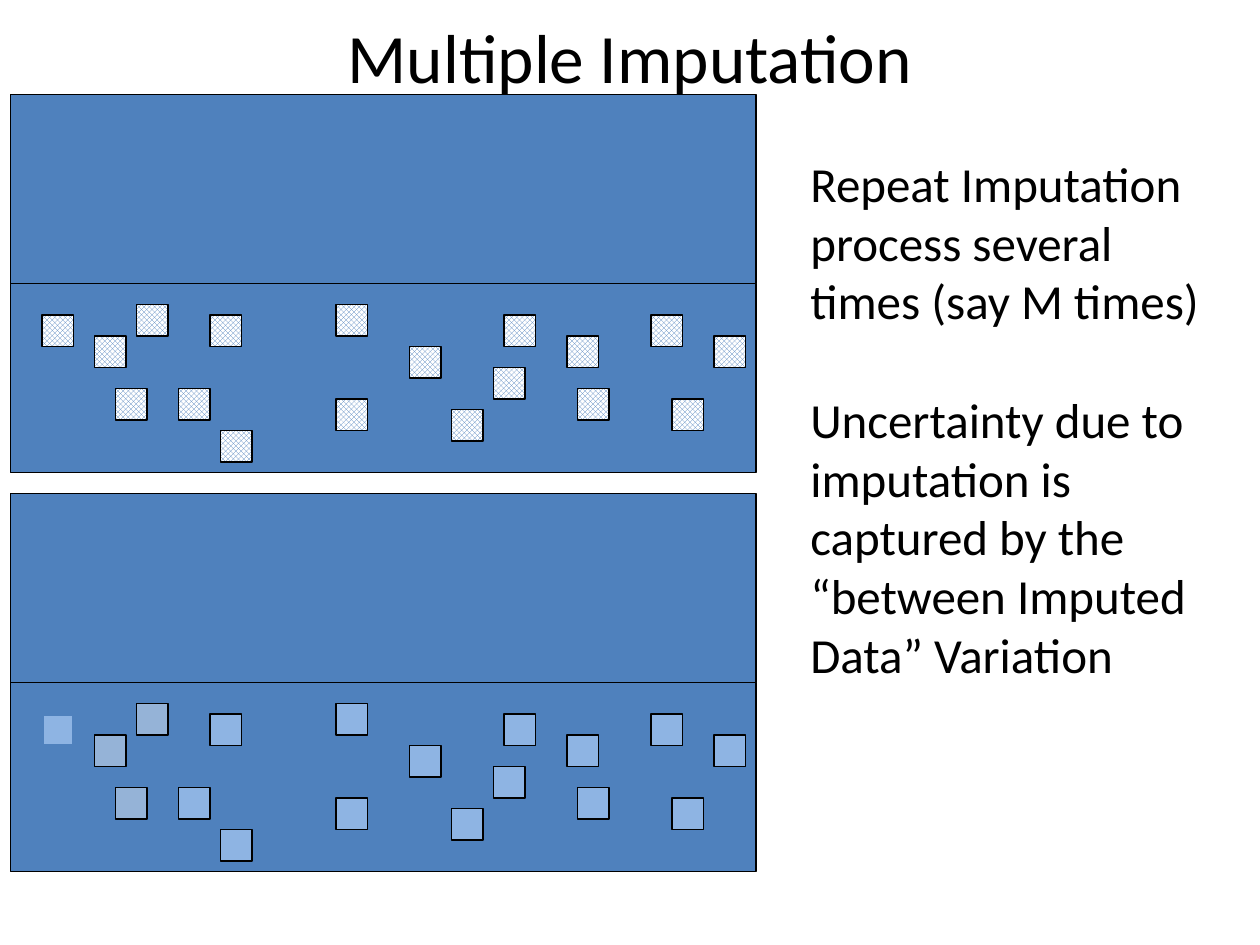
from dataclasses import dataclass
from pptx import Presentation
from pptx.dml.color import RGBColor
from pptx.enum.dml import MSO_PATTERN
from pptx.enum.shapes import MSO_SHAPE
from pptx.enum.text import MSO_ANCHOR, MSO_AUTO_SIZE, PP_ALIGN
from pptx.util import Inches, Pt


@dataclass(frozen=True)
class Theme:
    font: str = "Calibri"
    title: float = 39.6
    body: float = 28
    para_gap: float = 34
    line: float = 0.75
    heavy: float = 2
    ink: RGBColor = RGBColor(0x00, 0x00, 0x00)
    paper: RGBColor = RGBColor(0xFF, 0xFF, 0xFF)
    blue: RGBColor = RGBColor(0x4F, 0x81, 0xBD)
    light: RGBColor = RGBColor(0x8E, 0xB4, 0xE3)
    grey: RGBColor = RGBColor(0x95, 0xB3, 0xD7)


T = Theme()
UNIT = Inches(1) / 12
CELL = 3
CELLS = [
    (3, 3), (8, 5), (12, 2), (10, 10), (16, 10), (20, 14),
    (19, 3), (31, 2), (53, 5), (47, 3), (46, 8), (54, 10),
    (31, 11), (63, 11), (42, 12), (61, 3), (38, 6), (67, 5),
]
NOTES = [
    "Repeat Imputation process several times (say M times)",
    "Uncertainty due to imputation is captured by the “between Imputed Data” Variation",
]


def grid(*box):
    return [round(v * UNIT) for v in box]


def put(obj, values):
    for name, value in values.items():
        setattr(obj, name, value)


def add_run(p, text, size):
    r = p.add_run()
    r.text = text
    put(r.font, {"name": T.font, "size": Pt(size)})
    r.font.color.rgb = T.ink


def add_rect(s, box, fill, line=T.ink, width=T.line):
    sp = s.shapes.add_shape(MSO_SHAPE.RECTANGLE, *grid(*box))
    sp.shadow.inherit = False
    if fill is None:
        sp.fill.patterned()
        sp.fill.pattern = MSO_PATTERN.TRELLIS
        sp.fill.fore_color.rgb = T.blue
        sp.fill.back_color.rgb = T.paper
    else:
        sp.fill.solid()
        sp.fill.fore_color.rgb = fill
    sp.line.color.rgb = line
    sp.line.width = Pt(width)


def add_title(s, box, text):
    sp = s.shapes.title
    put(sp, dict(zip(("left", "top", "width", "height"), grid(*box))))
    tf = sp.text_frame
    put(tf, {"word_wrap": True, "vertical_anchor": MSO_ANCHOR.MIDDLE,
             "auto_size": MSO_AUTO_SIZE.NONE})
    p = tf.paragraphs[0]
    p.alignment = PP_ALIGN.CENTER
    add_run(p, text, T.title)


def add_dataset(s, box, styles):
    x, y, w, h = box
    half = h / 2
    for top in (y, y + half):
        add_rect(s, (x, top, w, half), T.blue)
    for (col, row), style in zip(CELLS, styles):
        add_rect(s, (x + col, y + half + row, CELL, CELL), *style)


def add_notes(s, box, notes):
    tf = s.shapes.add_textbox(*grid(*box)).text_frame
    put(tf, {"word_wrap": True, "auto_size": MSO_AUTO_SIZE.SHAPE_TO_FIT_TEXT})
    for i, text in enumerate(notes):
        p = tf.add_paragraph() if i else tf.paragraphs[0]
        p.space_before = Pt(T.para_gap if i else 0)
        add_run(p, text, T.body)


def main():
    prs = Presentation()
    put(prs, {"slide_width": Inches(10), "slide_height": Inches(7.5)})
    s = prs.slides.add_slide(prs.slide_layouts[5])
    missing = [(None,)] * len(CELLS)
    imputed = [(T.light, T.blue, T.heavy)] + [(T.grey,)] * 3
    imputed += [(T.light,)] * (len(CELLS) - len(imputed))
    add_title(s, (6, 0.6, 108, 9.4), "Multiple Imputation")
    for top, styles in ((9, missing), (47, imputed)):
        add_dataset(s, (1, top, 71, 36), styles)
    add_notes(s, (76, 14, 41, 52), NOTES)
    prs.save("out.pptx")


if __name__ == "__main__":
    main()
